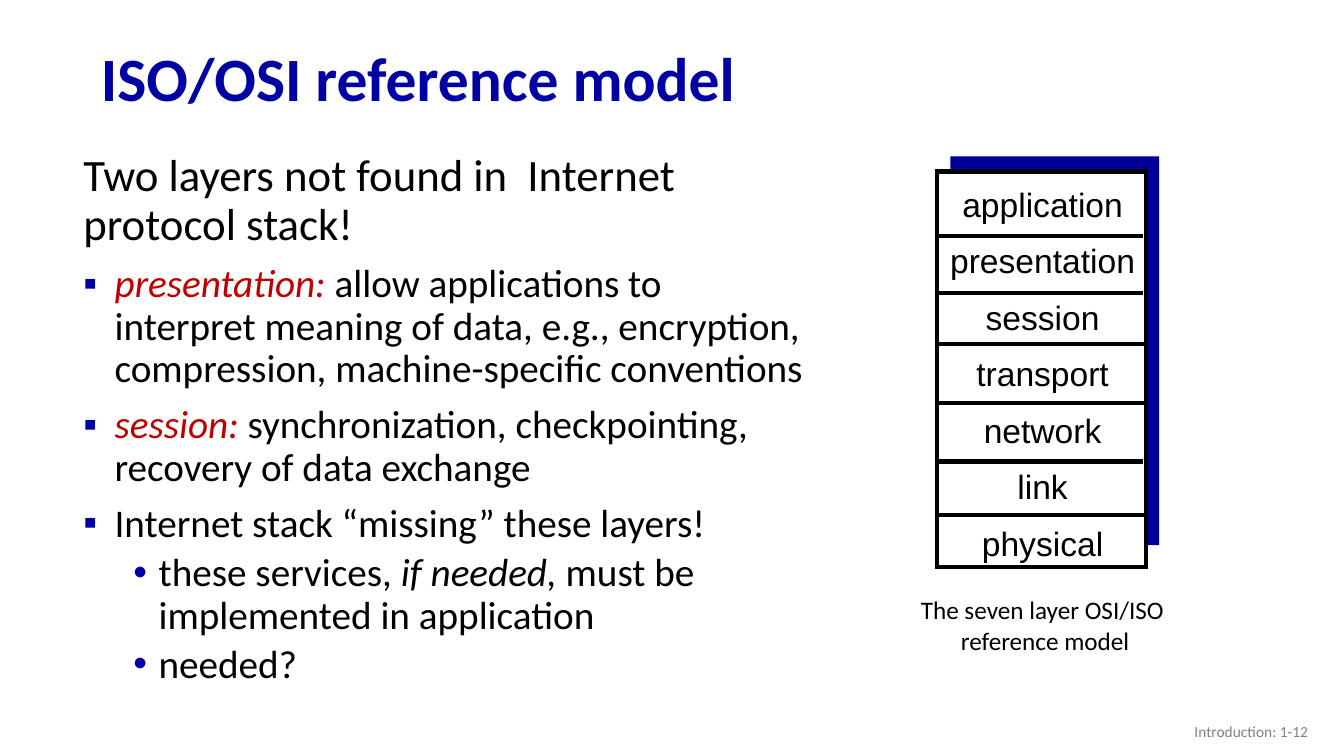
from lxml.etree import SubElement
from pptx import Presentation
from pptx.dml.color import RGBColor
from pptx.enum.shapes import MSO_CONNECTOR as Link, MSO_SHAPE as Shape
from pptx.enum.text import MSO_ANCHOR as Anchor, MSO_AUTO_SIZE as Fit, PP_ALIGN as Align
from pptx.oxml.ns import qn
from pptx.util import Cm, Pt

BLUE = RGBColor(0x00, 0x00, 0xA3)
DOT = RGBColor(0x00, 0x00, 0xA8)
NAVY = RGBColor(0x00, 0x00, 0x99)
RED = RGBColor(0xC0, 0x00, 0x00)
GRAY = RGBColor(0x80, 0x80, 0x80)
BLACK = RGBColor(0x00, 0x00, 0x00)
WHITE = RGBColor(0xFF, 0xFF, 0xFF)

LAYERS = ["application", "presentation", "session", "transport",
          "network", "link", "physical"]
# left edge and height of each rule between two layers, in cm
RULES = [(23.57, 5.94), (23.57, 7.39), (23.62, 8.66),
         (23.62, 10.16), (23.57, 11.63), (23.62, 12.98)]
# level, then runs of text and style: "key" is red italic, "em" is italic
POINTS = [
    (0, [("presentation: ", "key"),
         ("allow applications to interpret meaning of data, e.g., encryption, "
          "compression, machine-specific conventions", "")]),
    (0, [("session: ", "key"),
         ("synchronization, checkpointing, recovery of data exchange", "")]),
    (0, [("Internet stack “missing” these layers!", "")]),
    (1, [("these services, ", ""), ("if needed,", "em"),
         (" must be implemented in application", "")]),
    (1, [("needed?", "")]),
]
# mark, colour, left margin, hanging indent and space before, by level
MARKS = [("▪", BLUE, Cm(0.79), Cm(-0.79), Pt(10)),
         ("•", DOT, Cm(1.9), Cm(-0.64), Pt(5))]


class Deck:
    def __init__(self):
        self.show = Presentation()
        self.show.slide_width, self.show.slide_height = Cm(33.87), Cm(19.05)
        self.slide = self.show.slides.add_slide(self.show.slide_layouts[5])

    def style(self, para, size, color=BLACK, face="Calibri", align=Align.LEFT, lead=1.0):
        para.alignment, para.line_spacing = align, lead
        font = para.font
        font.name, font.size, font.color.rgb = face, Pt(size), color

    def title(self, text, box):
        head = self.slide.shapes.title
        head.left, head.top, head.width, head.height = map(Cm, box)
        frame = head.text_frame
        frame.text = text
        frame.auto_size, frame.vertical_anchor = Fit.NONE, Anchor.MIDDLE
        self.style(frame.paragraphs[0], 44, BLUE, lead=0.9)
        frame.paragraphs[0].font.bold = True

    def text(self, lines, box, size, wrap=True, anchor=Anchor.TOP, gap=0, **look):
        frame = self.slide.shapes.add_textbox(*map(Cm, box)).text_frame
        frame.word_wrap, frame.vertical_anchor = wrap, anchor
        frame.text = "\n".join(lines)
        for para in frame.paragraphs:
            self.style(para, size, **look)
            para.space_after = Pt(gap)
        return frame

    def point(self, frame, level, runs):
        """Add one bulleted paragraph."""
        mark, color, left, hang, before = MARKS[level]
        para = frame.add_paragraph()
        para.level = level
        props = para._p.get_or_add_pPr()
        props.set("marL", str(left))
        props.set("indent", str(hang))
        tint = SubElement(props, qn("a:buClr"))
        SubElement(tint, qn("a:srgbClr"), val=str(color))
        SubElement(props, qn("a:buFont"), typeface="Arial")
        SubElement(props, qn("a:buChar"), char=mark)
        self.style(para, 28, lead=0.9)
        para.space_before = before
        for words, kind in runs:
            run = para.add_run()
            run.text = words
            if kind:
                run.font.italic = True
            if kind == "key":
                run.font.color.rgb = RED

    def rect(self, box, fill, line=None):
        rect = self.slide.shapes.add_shape(Shape.RECTANGLE, *map(Cm, box))
        rect.shadow.inherit = False
        rect.fill.solid()
        rect.fill.fore_color.rgb = fill
        if line is None:
            rect.line.fill.background()
        else:
            rect.line.color.rgb, rect.line.width = line, Pt(3)
            edge = rect._element.spPr.find(qn("a:ln"))
            SubElement(edge, qn("a:miter"), lim="800000")

    def rule(self, left, top, width):
        ends = map(Cm, (left, top, left + width, top))
        rule = self.slide.shapes.add_connector(Link.STRAIGHT, *ends)
        rule.line.color.rgb, rule.line.width = BLACK, Pt(3)
        SubElement(rule._element.spPr, qn("a:effectLst"))


def main():
    deck = Deck()
    deck.title("ISO/OSI reference model", (2.29, 0.81, 29.21, 2.49))
    deck.text(["Introduction: 1-12"], (25.6, 17.91, 7.62, 1.02), 11,
              anchor=Anchor.MIDDLE, color=GRAY, align=Align.RIGHT)

    body = deck.text(["Two layers not found in  Internet protocol stack!"],
                     (1.85, 3.73, 18.8, 14.25), 32, lead=0.9)
    body.paragraphs[0].space_before = Pt(10)
    for level, runs in POINTS:
        deck.point(body, level, runs)

    deck.rect((23.95, 3.94, 5.26, 9.8), NAVY)
    deck.rect((23.62, 4.32, 5.26, 9.96), WHITE, BLACK)
    deck.text(LAYERS, (23.52, 4.78, 5.51, 9.47), 24, gap=20.2,
              face="Arial", align=Align.CENTER, lead=0.7)
    for left, top in RULES:
        deck.rule(left, top, 5.23)
    deck.text(["The seven layer OSI/ISO ", "reference model"],
              (22.91, 14.86, 6.86, 1.8), 18, wrap=False, align=Align.CENTER)
    deck.show.save("out.pptx")


if __name__ == "__main__":
    main()
